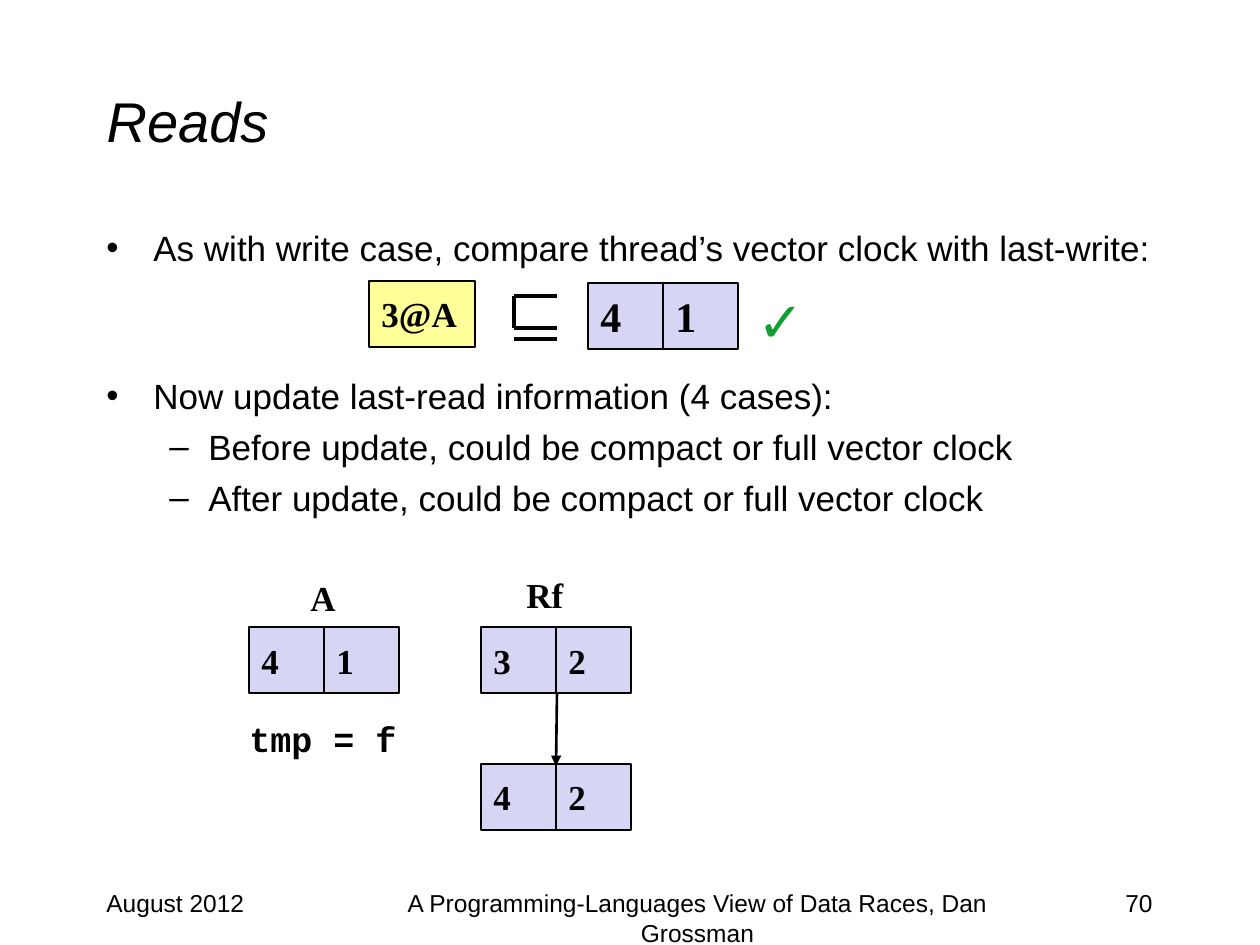
from lxml import etree
from pptx import Presentation
from pptx.dml.color import RGBColor
from pptx.enum.shapes import MSO_CONNECTOR, MSO_SHAPE
from pptx.enum.text import MSO_ANCHOR, PP_ALIGN
from pptx.oxml.ns import qn
from pptx.util import Emu, Pt

LEFT, CENTER, RIGHT = PP_ALIGN.LEFT, PP_ALIGN.CENTER, PP_ALIGN.RIGHT
TOP, MIDDLE = MSO_ANCHOR.TOP, MSO_ANCHOR.MIDDLE
RECTANGLE, STRAIGHT = MSO_SHAPE.RECTANGLE, MSO_CONNECTOR.STRAIGHT
PX_PER_INCH = 126
BLACK, BLUE, YELLOW, GREEN = "000000", "3333CC", "FFFF99", "119F33"

TITLE = ("Reads", (94, 42, 1071, 157))
BODY_PLACE = (94, 220, 1071, 620)
# text, level, points before
BODY = [
    ("As with write case, compare thread’s vector clock with last-write:", 0, 5),
    ("Now update last-read information (4 cases):", 0, 61),
    ("Before update, could be compact or full vector clock", 1, 5),
    ("After update, could be compact or full vector clock", 1, 5),
]
# bullet, text indent, hanging indent
LEVELS = [("•", 47, 47), ("–", 102, 39)]

FOOTERS = [
    ("August 2012", (94, 882, 262, 63), LEFT),
    ("70", (903, 882, 262, 63), RIGHT),
    ("A Programming-Languages View of Data Races, Dan Grossman",
     (346, 882, 703, 63), CENTER),
]
SERIF = {"name": "Times New Roman", "size": Pt(20), "bold": True}
LABELS = [
    ("✓", (745, 280, 69, 81), {"name": "Arial", "size": Pt(32)}, GREEN),
    ("A", (298, 570, 52, 55), SERIF, BLACK),
    ("tmp = f", (237, 711, 174, 55), {**SERIF, "name": "Courier New"}, BLACK),
    ("Rf", (514, 567, 63, 55), SERIF, BLACK),
]
CELL_WIDTH, CELL_HEIGHT = 75, 66
EPOCH = ("3@A", (369, 281, 106, CELL_HEIGHT))
# entries, left, top, points
CLOCKS = [
    ("41", 588, 283, 24),
    ("41", 249, 627, 20),
    ("32", 481, 627, 20),
    ("42", 481, 764, 20),
]
SUBSET_SIGN = [
    (514, 296, 557, 296),
    (514, 296, 514, 328),
    (514, 328, 557, 328),
    (514, 339, 557, 339),
]
UPDATE_ARROW = (557, 693, 556, 766)


def px(value):
    return Emu(round(value * 914400 / PX_PER_INCH))


def color(value):
    return RGBColor.from_string(value)


def write(para, text, font, ink=BLACK):
    span = para.add_run()
    span.text = text
    for key, value in font.items():
        setattr(span.font, key, value)
    span.font.color.rgb = color(ink)


def add_text(shapes, text, place, font, ink=BLACK, align=LEFT, anchor=TOP, wrap=True):
    box = shapes.add_textbox(*map(px, place))
    frame = box.text_frame
    frame.word_wrap, frame.vertical_anchor = wrap, anchor
    para = frame.paragraphs[0]
    para.alignment = align
    write(para, text, font, ink)


def add_cell(shapes, text, place, fill, points, opacity=100):
    cell = shapes.add_shape(RECTANGLE, *map(px, place))
    cell.shadow.inherit = False
    cell.fill.solid()
    cell.fill.fore_color.rgb = color(fill)
    if opacity < 100:
        tint = cell.fill._xPr.find(".//" + qn("a:srgbClr"))
        etree.SubElement(tint, qn("a:alpha"), val=str(opacity * 1000))
    cell.line.color.rgb = color(BLACK)
    cell.line.width = Pt(1.5)
    frame = cell.text_frame
    frame.vertical_anchor = MIDDLE
    para = frame.paragraphs[0]
    para.alignment = LEFT
    write(para, text, {**SERIF, "size": Pt(points)})


def add_line(shapes, ends, points, arrow=False):
    line = shapes.add_connector(STRAIGHT, *map(px, ends))
    line.line.color.rgb = color(BLACK)
    line.line.width = Pt(points)
    if arrow:
        etree.SubElement(line.line._get_or_add_ln(), qn("a:tailEnd"), type="triangle")
    etree.SubElement(line._element.spPr, qn("a:effectLst"))


def add_body(shapes):
    frame = shapes.add_textbox(*map(px, BODY_PLACE)).text_frame
    frame.word_wrap = True
    for index, (text, level, before) in enumerate(BODY):
        para = frame.add_paragraph() if index else frame.paragraphs[0]
        para.level, para.space_before = level, Pt(before)
        bullet, indent, hanging = LEVELS[level]
        properties = para._p.get_or_add_pPr()
        properties.set("marL", str(px(indent)))
        properties.set("indent", str(-px(hanging)))
        etree.SubElement(properties, qn("a:buFont"), typeface="Arial")
        etree.SubElement(properties, qn("a:buChar"), char=bullet)
        write(para, text, {"name": "Arial", "size": Pt(20)})


def add_title(title):
    text, place = TITLE
    title.left, title.top, title.width, title.height = map(px, place)
    title.text_frame.vertical_anchor = MIDDLE
    para = title.text_frame.paragraphs[0]
    para.alignment = LEFT
    write(para, text, {"name": "Arial", "size": Pt(32), "italic": True})


def main():
    deck = Presentation()
    deck.slide_width, deck.slide_height = px(1260), px(945)
    page = deck.slides.add_slide(deck.slide_layouts[5])
    shapes = page.shapes
    add_title(shapes.title)
    add_body(shapes)
    for text, place, align in FOOTERS:
        add_text(shapes, text, place, {"name": "Arial", "size": Pt(14)}, align=align)
    for entries, left, top, points in CLOCKS:
        clock = shapes.add_group_shape().shapes
        for column, entry in enumerate(entries):
            place = (left + column * CELL_WIDTH, top, CELL_WIDTH, CELL_HEIGHT)
            add_cell(clock, entry, place, BLUE, points, opacity=20)
    add_cell(shapes, *EPOCH, YELLOW, 20)
    sign = shapes.add_group_shape().shapes
    for ends in SUBSET_SIGN:
        add_line(sign, ends, 2.25)
    for text, place, font, ink in LABELS:
        add_text(shapes, text, place, font, ink, anchor=MIDDLE, wrap=False)
    add_line(shapes, UPDATE_ARROW, 1.5, arrow=True)
    deck.save("out.pptx")


if __name__ == "__main__":
    main()
